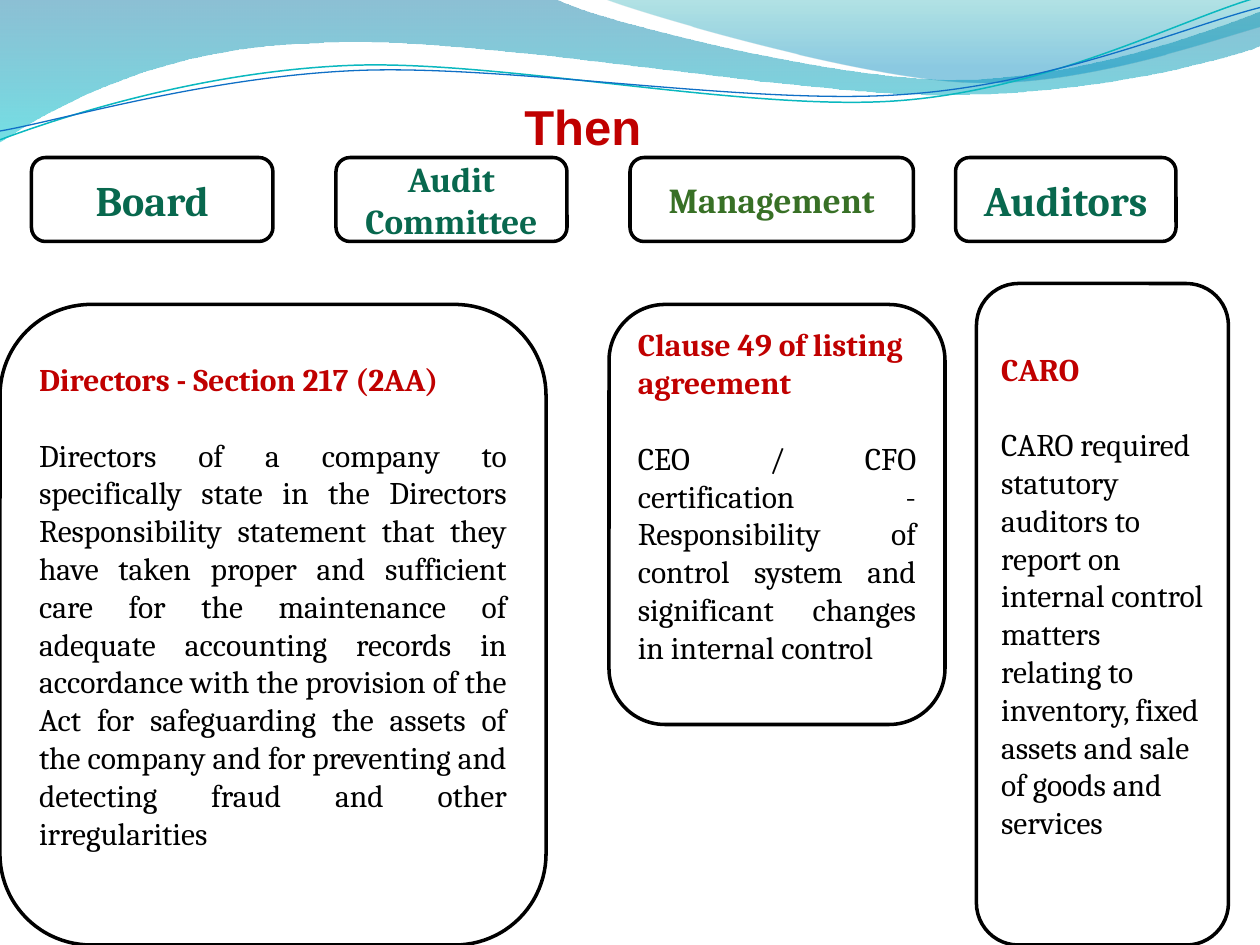
from lxml import etree
from pptx import Presentation
from pptx.dml.color import RGBColor
from pptx.enum.shapes import MSO_SHAPE as Shape
from pptx.enum.text import MSO_ANCHOR as Anchor, PP_ALIGN as Align
from pptx.oxml.ns import qn
from pptx.util import Inches, Pt


def color(hex_string):
    return RGBColor.from_string(hex_string)


def style_text(paragraph, text, size, hex_string, bold, align, font="Cambria"):
    paragraph.text = text
    paragraph.alignment = align
    paragraph.font.name = font
    paragraph.font.size = Pt(size)
    paragraph.font.bold = bold
    paragraph.font.color.rgb = color(hex_string)


presentation = Presentation()
presentation.slide_width, presentation.slide_height = Inches(10), Inches(7.5)
slide = presentation.slides.add_slide(presentation.slide_layouts[6])
shapes = slide.shapes

# Layout grid: 120 columns by 90 rows
COLUMN = presentation.slide_width // 120
ROW = presentation.slide_height // 90

# Waves in inches: a pair is a corner, six numbers are a Bézier curve.
# Each has gradient stops (position, colour, opacity) or a line (colour, width).
waves = [
    ([(0, 0), (4.4, -0.01), (4.76, 0.17, 6.64, 0.63, 7.58, 0.63),
      (8.53, 0.63, 9.58, 0.26, 10, 0.09), (10.01, 0.36),
      (9.83, 0.44, 8.7, 0.76, 7.46, 0.75), (6.22, 0.75, 3.82, 0.28, 2.57, 0.34),
      (1.29, 0.36, 0.46, 0.83, -0.01, 1.13)],
     [(0, "0074A1", 45), (1, "00C6CF", 55)], None),
    ([(4.79, -0.01), (5.09, 0.11, 6.82, 0.62, 7.69, 0.65),
      (8.56, 0.69, 9.61, 0.32, 10, 0.21), (10, 0)],
     [(0, "00A1A9", 30), (0.8, "008BBF", 45)], None),
    ([(0, 1.11), (0.48, 0.93, 1.58, 0.57, 2.77, 0.52),
      (3.95, 0.47, 5.93, 0.89, 7.13, 0.8), (8.33, 0.71, 9.38, 0.15, 9.98, -0.02)],
     None, ("0AB8BF", 0.85)),
    ([(0, 1.04), (0.47, 0.96, 1.64, 0.61, 2.83, 0.56),
      (4.03, 0.51, 5.97, 0.84, 7.17, 0.75), (8.36, 0.67, 9.41, 0.21, 10, 0.06)],
     None, ("0F6FC6", 0.75)),
]
for outline, stops, line in waves:
    corners = [(Inches(segment[-2]), Inches(segment[-1])) for segment in outline]
    builder = shapes.build_freeform(*corners[0])
    builder.add_line_segments(corners[1:], close=line is None)
    wave = builder.convert_to_shape()
    wave.shadow.inherit = False

    # Bend the straight segments that have control points
    straight_nodes = list(wave.element.iter(qn("a:lnTo")))
    for node, segment in zip(straight_nodes, outline[1:]):
        if len(segment) == 6:
            node.tag = qn("a:cubicBezTo")
            for index in (0, 2):
                point = etree.Element(qn("a:pt"))
                point.set("x", str(Inches(segment[index]) - wave.left))
                point.set("y", str(Inches(segment[index + 1]) - wave.top))
                node.insert(index // 2, point)

    if line:
        wave.fill.background()
        wave.line.color.rgb = color(line[0])
        wave.line.width = Pt(line[1])
    else:
        wave.line.fill.background()
        wave.fill.gradient()
        wave.fill.gradient_angle = 270
        for stop, (position, hex_string, _) in zip(wave.fill.gradient_stops, stops):
            stop.position = position
            stop.color.rgb = color(hex_string)
        color_nodes = wave.element.spPr.iter(qn("a:srgbClr"))
        for node, (_, _, opacity) in zip(color_nodes, stops):
            etree.SubElement(node, qn("a:alpha")).set("val", str(opacity * 1000))

# Boxes: left, top, width, height in grid units, then the paragraphs
GREEN, RED, BLACK = "08684E", "C00000", "000000"
headers = [
    (3, 23, "Board", 24, GREEN),
    (32, 22, "Audit Committee", 20, GREEN),
    (60, 27, "Management", 20, "387026"),
    (91, 21, "Auditors", 24, GREEN),
]
details = [
    (0, 29, 52, 61, "Directors - Section 217 (2AA)", Align.JUSTIFY,
     "Directors of a company to specifically state in the Directors Responsibility "
     "statement that they have taken proper and sufficient care for the maintenance of "
     "adequate accounting records in accordance with the provision of the Act for "
     "safeguarding the assets of the company and for preventing and detecting fraud "
     "and other irregularities"),
    (58, 29, 32, 40, "Clause 49 of listing agreement", Align.JUSTIFY,
     "CEO / CFO certification - Responsibility of control system and significant "
     "changes in internal control"),
    (93, 27, 24, 63, "CARO", Align.LEFT,
     "CARO required statutory auditors to report on internal control matters relating "
     "to inventory, fixed assets and sale of goods and services"),
]
header_boxes = [(left, 15, width, 8, [(text, size, hex_string, True, Align.CENTER)])
                for left, width, text, size, hex_string in headers]
detail_boxes = [(left, top, width, height, [(heading, 18, RED, True, Align.LEFT),
                                            (body, 18, BLACK, False, align)])
                for left, top, width, height, heading, align, body in details]

# One-cell tables frame the bands: the table's place, its text, the boxes on it
bands = [
    ((4, 14, 111, 16), "", header_boxes),
    ((4, 27, 109, 52), "", detail_boxes),
    ((3, 9, 105, 7), "Then", []),
]
NO_STYLE_NO_GRID = "{2D5ABB26-0587-4C30-8999-92F81FD0307C}"
LINE_HEIGHT = Pt(21.6)
for (left, top, width, height), title, boxes in bands:
    table = shapes.add_table(1, 1, left * COLUMN, top * ROW,
                             width * COLUMN, height * ROW).table
    table.first_row = table.horz_banding = False
    next(table._tbl.iter(qn("a:tableStyleId"))).text = NO_STYLE_NO_GRID
    cell = table.cell(0, 0)
    cell.fill.background()
    if title:
        style_text(cell.text_frame.paragraphs[0], title, 28, RED, True,
                   Align.CENTER, "Arial")

    for left, top, width, height, texts in boxes:
        box = shapes.add_shape(Shape.FLOWCHART_ALTERNATE_PROCESS, left * COLUMN,
                               top * ROW, width * COLUMN, height * ROW)
        box.shadow.inherit = False
        box.fill.solid()
        box.fill.fore_color.rgb = color("FFFFFF")
        box.line.color.rgb = color(BLACK)
        box.line.width = Pt(2)
        frame = box.text_frame
        frame.word_wrap = True
        frame.vertical_anchor = Anchor.MIDDLE
        for index, text in enumerate(texts):
            paragraph = frame.add_paragraph() if index else frame.paragraphs[0]
            style_text(paragraph, *text)
        if len(texts) > 1:
            frame.paragraphs[0].space_after = LINE_HEIGHT
            frame.margin_bottom = Inches(0.05) + LINE_HEIGHT

presentation.save("out.pptx")
